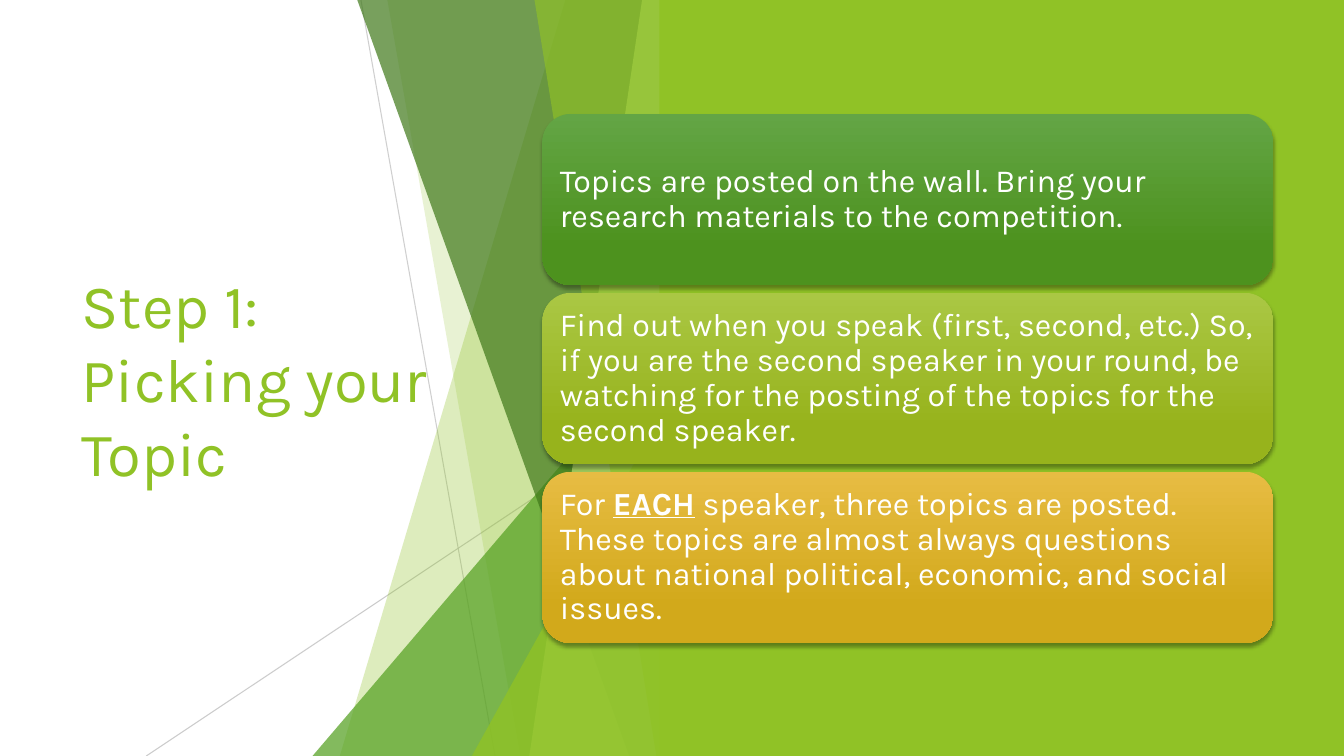
from lxml import etree
from pptx import Presentation
from pptx import util as u
from pptx.dml.color import RGBColor
from pptx.enum import shapes, text
from pptx.oxml import ns

FONT = "Karla"
LIME = "90C226"
LEAF = "54A021"
FOREST = "3F7819"
PALE = "C0E474"
TOP, BOTTOM, EDGE = -0.01, 7.5, 6.66

CARDS = [
    ("63A545", "4D921E",
     ["Topics are posted on the wall. Bring your research materials to the competition."]),
    ("AAC744", "97B31C",
     ["Find out when you speak (first, second, etc.) So, if you are the second speaker "
      "in your round, be watching for the posting of the topics for the second speaker."]),
    ("E7BC43", "D2A91B",
     ["For ", "EACH", " speaker, three topics are posted. These topics are almost always "
      "questions about national political, economic, and social issues."]),
]
EMPHASIS = "EACH"


def rgb(value):
    return RGBColor.from_string(value)


def add_child(parent, tag, **attributes):
    child = etree.SubElement(parent, ns.qn(tag))
    for key, value in attributes.items():
        child.set(key, str(value))
    return child


def set_opacity(shape, percent):
    """Make the shape's only solid colour, of fill or line, partly transparent."""
    colour = next(shape._element.spPr.iter(ns.qn("a:srgbClr")))
    add_child(colour, "a:alpha", val=percent * 1000)


def paint(shape, colour, opacity=None):
    shape.shadow.inherit = False
    shape.fill.solid()
    shape.fill.fore_color.rgb = rgb(colour)
    shape.line.fill.background()
    if opacity:
        set_opacity(shape, opacity)


def add_hairline(slide, start, end, opacity):
    ends = [u.Inches(value) for value in (*start, *end)]
    hairline = slide.shapes.add_connector(shapes.MSO_CONNECTOR.STRAIGHT, *ends)
    hairline.line.color.rgb = rgb("BFBFBF")
    hairline.line.width = u.Pt(0.75)
    set_opacity(hairline, opacity)
    add_child(hairline._element.spPr, "a:effectLst")


def add_facet(slide, top_x, bottom_x, colour, opacity):
    """Draw a full-height panel with a slanted left side."""
    corners = [(top_x, TOP), (EDGE, TOP), (EDGE, BOTTOM), (bottom_x, BOTTOM)]
    points = [(u.Inches(x), u.Inches(y)) for x, y in corners]
    builder = slide.shapes.build_freeform(*points[0])
    builder.add_line_segments(points[1:], close=True)
    paint(builder.convert_to_shape(), colour, opacity)


def add_wedge(slide, left, top, colour, opacity):
    """Draw a right triangle that rises to the facets' right edge."""
    wedge = slide.shapes.add_shape(
        shapes.MSO_SHAPE.ISOSCELES_TRIANGLE, u.Inches(left), u.Inches(top),
        u.Inches(EDGE - left), u.Inches(BOTTOM - top))
    wedge.adjustments[0] = 1
    paint(wedge, colour, opacity)


def add_backdrop(slide):
    add_hairline(slide, (3.58, 0), (4.91, 7.5), 75)
    add_hairline(slide, (6.66, 4.03), (1.45, 7.5), 80)
    add_facet(slide, 5.61, 3.37, LIME, 30)
    add_facet(slide, 3.84, 5.16, LIME, 20)
    add_wedge(slide, 3.1, 3.33, LEAF, 72)
    add_facet(slide, 3.54, 6.24, FOREST, 70)
    add_facet(slide, 6.37, 5.25, PALE, 70)
    add_facet(slide, 5.3, 6.51, LIME, 65)
    add_wedge(slide, 4.68, 3.93, LIME, 80)
    panel = slide.shapes.add_shape(
        shapes.MSO_SHAPE.RECTANGLE, u.Inches(6.54), 0, u.Inches(6.8), u.Inches(7.5))
    paint(panel, LIME)


def add_title(slide, wording):
    title = slide.shapes.title
    title.left, title.top = u.Inches(0.71), u.Inches(1.51)
    title.width, title.height = u.Inches(3.88), u.Inches(4.48)
    frame = title.text_frame
    frame.text = wording
    frame.word_wrap = True
    frame.auto_size = text.MSO_AUTO_SIZE.NONE
    frame.vertical_anchor = text.MSO_ANCHOR.MIDDLE
    heading = frame.paragraphs[0]
    heading.alignment = text.PP_ALIGN.LEFT
    heading.font.name = FONT
    heading.font.size = u.Pt(44)
    heading.font.color.rgb = rgb(LIME)


def add_card(slide, top, light, dark, pieces):
    card = slide.shapes.add_shape(
        shapes.MSO_SHAPE.ROUNDED_RECTANGLE, u.Inches(5.38), u.Inches(top),
        u.Inches(7.25), u.Inches(1.7))
    card.line.fill.background()
    card.fill.gradient()
    card.fill.gradient_angle = 270
    for stop, place, colour in zip(card.fill.gradient_stops, (0, 0.78), (light, dark)):
        stop.position = place
        stop.color.rgb = rgb(colour)

    card.shadow.inherit = False
    effects = card._element.spPr.find(ns.qn("a:effectLst"))
    shadow = add_child(effects, "a:outerShdw", blurRad=u.Pt(3), dist=u.Pt(2),
                       dir=90 * 60000, rotWithShape=0)
    shade = add_child(shadow, "a:srgbClr", val="000000")
    add_child(shade, "a:alpha", val=35000)

    frame = card.text_frame
    frame.word_wrap = True
    frame.vertical_anchor = text.MSO_ANCHOR.MIDDLE
    frame.margin_left = frame.margin_right = u.Inches(0.09)
    step = frame.paragraphs[0]
    step.alignment = text.PP_ALIGN.LEFT
    step.line_spacing = 0.9
    step.font.name = FONT
    step.font.size = u.Pt(23)
    step.font.color.rgb = rgb("FFFFFF")
    for piece in pieces:
        run = step.add_run()
        run.text = piece
        if piece == EMPHASIS:
            run.font.bold = run.font.underline = True


def main():
    deck = Presentation()
    deck.slide_width, deck.slide_height = u.Inches(13.33), u.Inches(7.5)
    slide = deck.slides.add_slide(deck.slide_layouts[5])
    add_title(slide, "Step 1: Picking your Topic")
    add_backdrop(slide)
    for row, (light, dark, pieces) in enumerate(CARDS):
        add_card(slide, 1.13 + row * 1.775, light, dark, pieces)
    deck.save("out.pptx")


if __name__ == "__main__":
    main()
